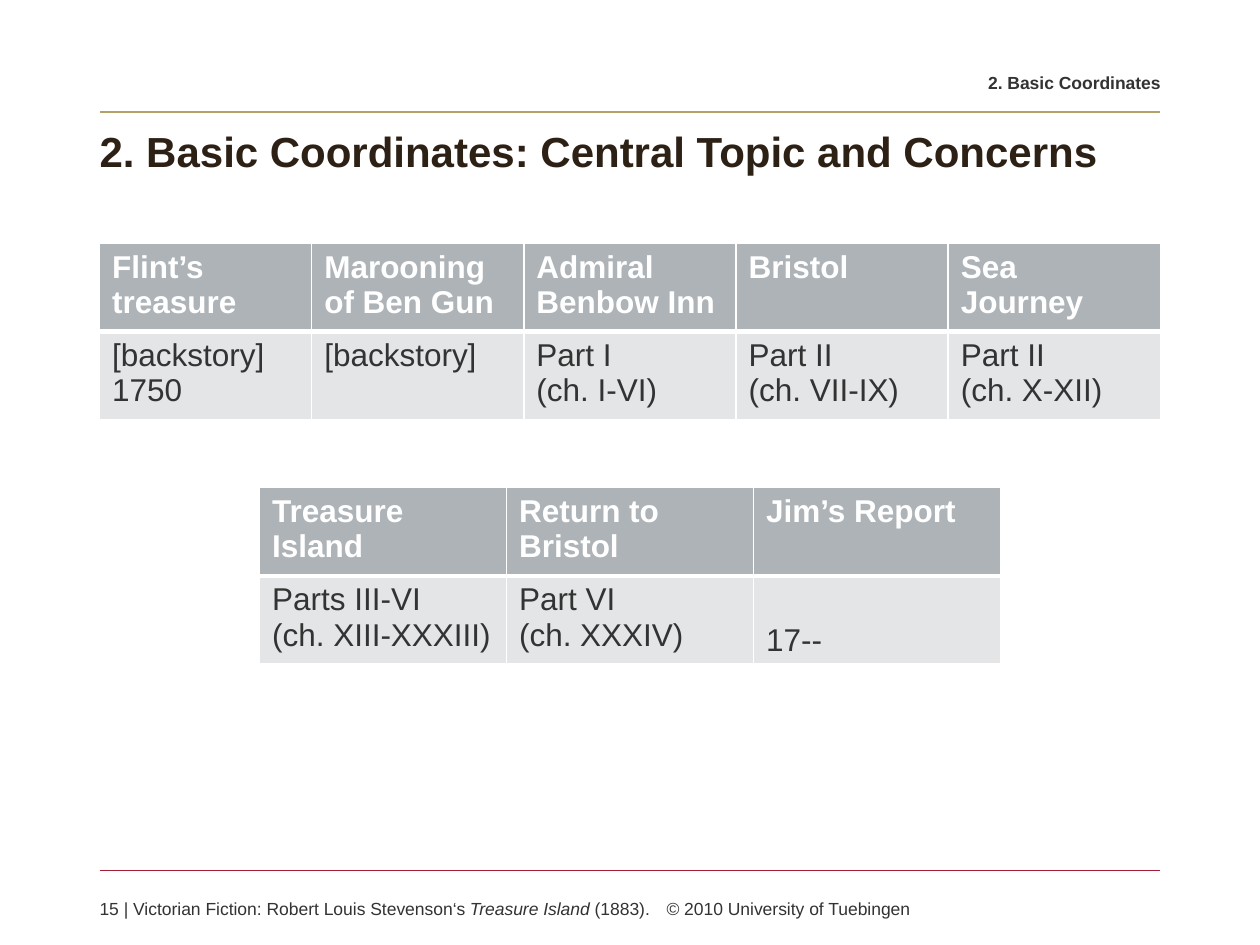
import pptx
import pptx.dml.color
import pptx.enum.shapes
import pptx.enum.text
import pptx.oxml
import pptx.oxml.ns
import pptx.util
from pptx.util import Inches

COLORS = {
    "gold": "B4A069", "red": "A51E37", "text": "333333", "title": "2D2015",
    "white": "FFFFFF", "head": "ADB3B7", "body": "E3E5E6",
}
LEFT, WIDTH = 0.79, 8.42
ROW_HEIGHT = 0.7
ALIGN = pptx.enum.text.PP_ALIGN
ANCHOR = pptx.enum.text.MSO_ANCHOR

STORY_START = [
    ("Flint’s treasure", ["[backstory]", "1750"]),
    ("Marooning of Ben Gun", ["[backstory]"]),
    ("Admiral Benbow Inn", ["Part I", "(ch. I-VI)"]),
    ("Bristol", ["Part II", "(ch. VII-IX)"]),
    ("Sea Journey", ["Part II", "(ch. X-XII)"]),
]
STORY_END = [
    ("Treasure Island", ["Parts III-VI", "(ch. XIII-XXXIII)"]),
    ("Return to Bristol", ["Part VI", "(ch. XXXIV)"]),
    ("Jim’s Report", ["17--"]),
]


def rgb(name):
    """Return the named colour."""
    return pptx.dml.color.RGBColor.from_string(COLORS[name])


def set_font(font, size, color, **formats):
    """Apply size, colour and further format values to a font."""
    values = {"name": "Arial", "size": pptx.util.Pt(size), **formats}
    for attribute, value in values.items():
        setattr(font, attribute, value)
    font.color.rgb = rgb(color)


def add_rule(slide, left, top, width, color):
    """Draw a thin horizontal line."""
    line = slide.shapes.add_connector(
        pptx.enum.shapes.MSO_CONNECTOR.STRAIGHT,
        Inches(left), Inches(top), Inches(left + width), Inches(top))
    line.line.color.rgb = rgb(color)
    line.line.width = pptx.util.Pt(0.75)
    line._element.spPr.append(pptx.oxml.parse_xml(
        f'<a:effectLst {pptx.oxml.ns.nsdecls("a")}/>'))


def add_text(slide, box, runs, size, color, anchor=ANCHOR.TOP, **formats):
    """Add a one-paragraph text box from (text, font values) runs."""
    shape = slide.shapes.add_textbox(*map(Inches, box))
    frame = shape.text_frame
    frame_values = {"word_wrap": True, "vertical_anchor": anchor, "margin_left": 0,
                    "margin_top": 0, "margin_right": 0, "margin_bottom": 0}
    for attribute, value in frame_values.items():
        setattr(frame, attribute, value)
    paragraph = frame.paragraphs[0]
    for attribute, value in formats.items():
        setattr(paragraph, attribute, value)
    for text, font_values in runs:
        run = paragraph.add_run()
        run.text = text
        set_font(run.font, size, color, **font_values)


def set_borders(cell, widths):
    """Give a cell white borders with widths in points by side."""
    properties = cell._tc.get_or_add_tcPr()
    for index, side in enumerate("LRTB"):
        properties.insert(index, pptx.oxml.parse_xml(
            f'<a:ln{side} {pptx.oxml.ns.nsdecls("a")} w="{pptx.util.Pt(widths[side])}">'
            f'<a:solidFill><a:srgbClr val="{COLORS["white"]}"/></a:solidFill></a:ln{side}>'))


def fill_cell(cell, lines, fill, color, bold, widths):
    """Write the lines of a cell and set its look."""
    cell.fill.solid()
    cell.fill.fore_color.rgb = rgb(fill)
    set_borders(cell, widths)
    cell.text = "\n".join(lines)
    for paragraph in cell.text_frame.paragraphs:
        for run in paragraph.runs:
            set_font(run.font, 18, color, bold=bold)


def add_story_table(slide, left, top, width, episodes):
    """Add a table with one column per episode."""
    table = slide.shapes.add_table(
        2, len(episodes), Inches(left), Inches(top),
        Inches(width), Inches(2 * ROW_HEIGHT)).table
    table.horz_banding = False
    for index, (heading, lines) in enumerate(episodes):
        fill_cell(table.cell(0, index), [heading], "head", "white", True,
                  {"L": 1, "R": 1, "T": 1, "B": 3})
        fill_cell(table.cell(1, index), lines, "body", "text", False,
                  {"L": 1, "R": 1, "T": 3, "B": 1})
    return table


def add_header(slide, left, top, width):
    """Add the section label, its rule and the title."""
    add_text(slide, (left, top, width, 0.39),
             [("2. Basic Coordinates", {"bold": True})], 10, "text",
             ANCHOR.BOTTOM, alignment=ALIGN.RIGHT, line_spacing=pptx.util.Pt(14))
    add_rule(slide, left, top + 0.54, width, "gold")
    add_text(slide, (left, top + 0.65, width, 0.4),
             [("2. Basic Coordinates: Central Topic and Concerns", {"bold": True})],
             24, "title", ANCHOR.BOTTOM)


def add_footer(slide, left, top, width):
    """Add the footer rule and the footer line."""
    add_rule(slide, left, top, width, "red")
    add_text(slide, (left, top + 0.22, width, 0.17), [
        ("15 | Victorian Fiction: Robert Louis Stevenson‘s ", {}),
        ("Treasure Island ", {"italic": True}),
        ("(1883).\t© 2010 University of Tuebingen", {}),
    ], 10, "text")


def main():
    """Build and save the slide."""
    presentation = pptx.Presentation()
    presentation.slide_width, presentation.slide_height = Inches(10), Inches(7.5)
    slide = presentation.slides.add_slide(presentation.slide_layouts[6])
    add_header(slide, LEFT, 0.35, WIDTH)
    add_story_table(slide, LEFT, 1.93, WIDTH, STORY_START)
    ending = add_story_table(slide, 2.06, 3.87, 5.88, STORY_END)
    ending.cell(1, 2).vertical_anchor = ANCHOR.BOTTOM
    add_footer(slide, LEFT, 6.91, WIDTH)
    presentation.save("out.pptx")


if __name__ == "__main__":
    main()
